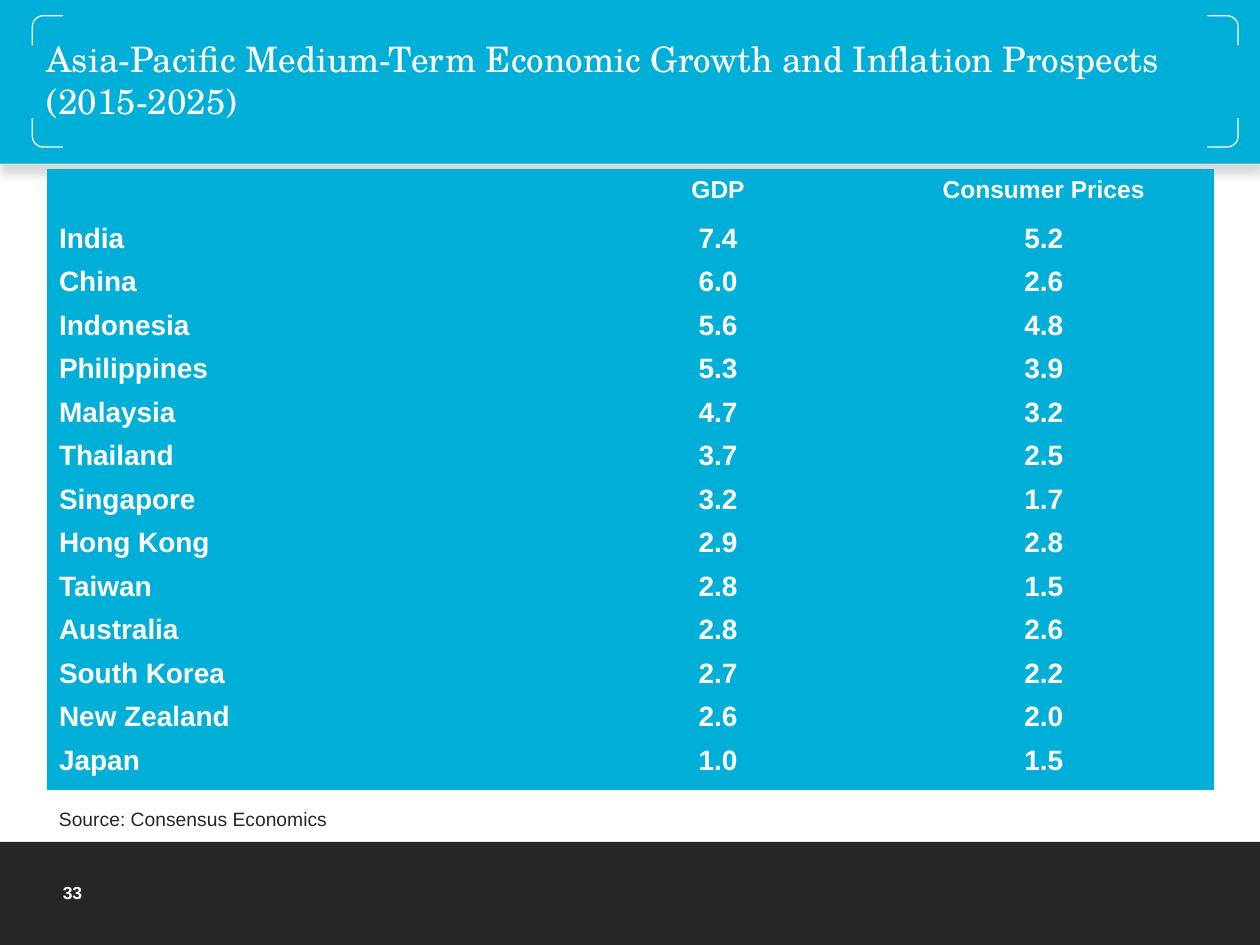
from lxml.etree import SubElement
from pptx import Presentation
from pptx.dml.color import RGBColor
from pptx.enum.shapes import MSO_SHAPE
from pptx.enum.text import MSO_ANCHOR, MSO_AUTO_SIZE, PP_ALIGN
from pptx.oxml import parse_xml
from pptx.oxml.ns import nsdecls, qn
from pptx.util import Pt

COLORS = {"blue": "00AFD7", "dark": "262626", "white": "FFFFFF", "shadow": "000000"}
FORMATS = {
    "title": {"name": "TeX Gyre Schola", "size": Pt(20), "color": "white"},
    "number": {"name": "Arial", "size": Pt(10), "bold": True, "color": "white"},
    "header": {"name": "Arial", "size": Pt(14), "bold": True, "color": "white"},
    "body": {"name": "Arial", "size": Pt(16), "bold": True, "color": "white"},
    "source": {"name": "Arial", "size": Pt(11), "color": "dark"},
}
PROSPECTS = [
    ("", "GDP", "Consumer Prices"),
    ("India", "7.4", "5.2"),
    ("China", "6.0", "2.6"),
    ("Indonesia", "5.6", "4.8"),
    ("Philippines", "5.3", "3.9"),
    ("Malaysia", "4.7", "3.2"),
    ("Thailand", "3.7", "2.5"),
    ("Singapore", "3.2", "1.7"),
    ("Hong Kong", "2.9", "2.8"),
    ("Taiwan", "2.8", "1.5"),
    ("Australia", "2.8", "2.6"),
    ("South Korea", "2.7", "2.2"),
    ("New Zealand", "2.6", "2.0"),
    ("Japan", "1.0", "1.5"),
]


def color(name):
    return RGBColor.from_string(COLORS[name])


def write(frame, text, style, align=PP_ALIGN.LEFT, spacing=None):
    para = frame.paragraphs[0]
    para.alignment = align
    para.line_spacing = spacing
    span = para.add_run()
    span.text = text
    for key, value in FORMATS[style].items():
        if key == "color":
            span.font.color.rgb = color(value)
        else:
            setattr(span.font, key, value)


def add_panel(shapes, box, fill, kind=MSO_SHAPE.RECTANGLE):
    panel = shapes.add_shape(kind, *map(Pt, box))
    panel.shadow.inherit = False
    panel.fill.solid()
    panel.fill.fore_color.rgb = color(fill)
    panel.line.fill.background()
    return panel


def add_drop_shadow(panel):
    effects = panel._element.spPr.find(qn("a:effectLst"))
    effects.append(parse_xml(
        f'<a:outerShdw {nsdecls("a")} blurRad="{Pt(5)}" dist="{Pt(5)}" dir="5400000" '
        f'algn="t" rotWithShape="0"><a:srgbClr val="{COLORS["shadow"]}">'
        '<a:alpha val="15000"/></a:srgbClr></a:outerShdw>'))


def add_banner(page, box):
    left, top, width, height = box
    add_drop_shadow(add_panel(page.shapes, box, "blue"))
    corners = page.shapes.add_group_shape().shapes
    frame = add_panel(corners, (left + 18.5, top + 9, width - 31, height - 18.6),
                      "blue", MSO_SHAPE.ROUNDED_RECTANGLE)
    frame.adjustments[0] = 0.083
    frame.line.color.rgb = color("white")
    frame.line.width = Pt(0.75)
    add_panel(corners, (left + 10.8, top + 26, width - 18, height - 52), "blue")
    add_panel(corners, (left + 36, top + 4.3, width - 66, height - 8.6), "blue")


def add_title(page, box, text):
    title = page.shapes.title
    title.left, title.top, title.width, title.height = map(Pt, box)
    page.shapes._spTree.append(title._element)
    frame = title.text_frame
    frame.auto_size = MSO_AUTO_SIZE.NONE
    frame.vertical_anchor = MSO_ANCHOR.MIDDLE
    write(frame, text, "title")


def add_label(page, box, text, style, anchor):
    frame = page.shapes.add_textbox(*map(Pt, box)).text_frame
    frame.word_wrap = True
    frame.vertical_anchor = anchor
    write(frame, text, style)


def add_prospects_table(page, box):
    header_height = 31.7
    row_height = (box[3] - header_height) / (len(PROSPECTS) - 1)
    table = page.shapes.add_table(len(PROSPECTS), 3, *map(Pt, box)).table
    table.horz_banding = False
    for column, width in zip(table.columns, (295.2, 177.1, 195.1)):
        column.width = Pt(width)
    for index, values in enumerate(PROSPECTS):
        style, spacing = ("body", 0.7) if index else ("header", 1.05)
        table.rows[index].height = Pt(row_height if index else header_height)
        for place, value in enumerate(values):
            cell = table.cell(index, place)
            cell.fill.solid()
            cell.fill.fore_color.rgb = color("blue")
            properties = cell._tc.get_or_add_tcPr()
            for order, side in enumerate(("lnL", "lnR", "lnT", "lnB")):
                line = SubElement(properties, qn(f"a:{side}"), w="0")
                SubElement(line, qn("a:noFill"))
                properties.insert(order, line)
            if value:
                align = PP_ALIGN.CENTER if place else PP_ALIGN.LEFT
                write(cell.text_frame, value, style, align, spacing)


def main():
    deck = Presentation()
    deck.slide_width, deck.slide_height = Pt(720), Pt(540)
    page = deck.slides.add_slide(deck.slide_layouts[5])
    add_panel(page.shapes, (0, 481, 720, 59), "dark")
    add_banner(page, (0, 0, 720, 93.6))
    add_label(page, (28.8, 500.6, 83.5, 19.4), "33", "number", MSO_ANCHOR.MIDDLE)
    add_title(page, (19.4, 18, 654.5, 55.4),
              "Asia-Pacific Medium-Term Economic Growth and Inflation Prospects (2015-2025)")
    add_prospects_table(page, (26.6, 96.5, 667.4, 355))
    add_label(page, (26.6, 458, 203, 21), "Source: Consensus Economics", "source",
              MSO_ANCHOR.TOP)
    deck.save("out.pptx")


if __name__ == "__main__":
    main()
